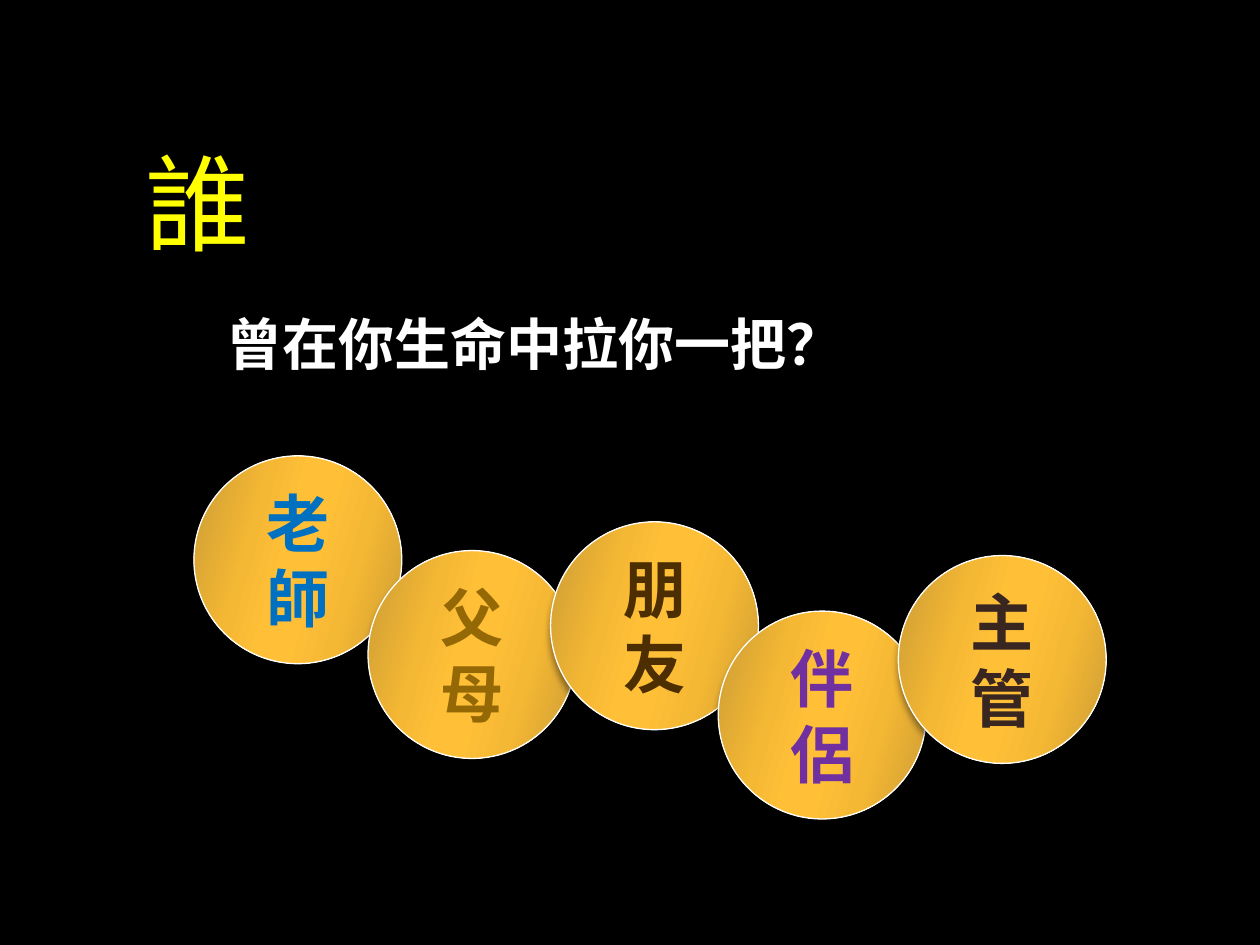
from lxml.etree import SubElement
from pptx import Presentation
from pptx.dml.color import RGBColor
from pptx.enum.shapes import MSO_SHAPE as Shape
from pptx.enum.text import MSO_ANCHOR as Anchor, PP_ALIGN as Align
from pptx.oxml import parse_xml
from pptx.oxml.ns import nsdecls, qn
from pptx.util import Cm, Pt

COLOURS = {
    "background": "000000",
    "question": "FFFF00",
    "white": "FFFFFF",
    "teacher": "0070C0",
    "parents": "956806",
    "friends": "4C2E00",
    "partner": "7030A0",
    "manager": "3A2620",
    "gold_edge": "CA9B34",
    "gold": "F5B834",
    "gold_shine": "FFC038",
}
GOLD_STOPS = [(0, "gold_edge"), (30, "gold"), (45, "gold_shine"),
              (55, "gold_shine"), (73, "gold"), (100, "gold_edge")]
DIAMETER = 4.19


class SlideBuilder:
    """Holds the style and the current slide."""

    font = "Cabin"

    def __init__(self, slide):
        self.slide = slide

    def colour(self, name):
        return RGBColor.from_string(COLOURS[name])

    def background(self, name):
        fill = self.slide.background.fill
        fill.solid()
        fill.fore_color.rgb = self.colour(name)

    def run(self, paragraph, words, size, colour, bold=False):
        run = paragraph.add_run()
        run.text = words
        run.font.name = self.font
        run.font.size = Pt(size)
        run.font.bold = bold
        run.font.color.rgb = self.colour(colour)
        return run

    def text(self, words, left, top, width, height, size, colour,
             bold=False, wrap=True):
        box = self.slide.shapes.add_textbox(Cm(left), Cm(top), Cm(width), Cm(height))
        box.text_frame.word_wrap = wrap
        paragraph = box.text_frame.paragraphs[0]
        self.run(paragraph, words, size, colour, bold)
        return paragraph

    def gold_circle(self, words, left, top, colour):
        circle = self.slide.shapes.add_shape(
            Shape.OVAL, Cm(left), Cm(top), Cm(DIAMETER), Cm(DIAMETER))
        circle.line.color.rgb = self.colour("white")
        circle.line.width = Pt(0.75)
        self.gold_fill(circle)
        self.soft_shadow(circle)
        frame = circle.text_frame
        frame.word_wrap = True
        frame.vertical_anchor = Anchor.MIDDLE
        paragraph = frame.paragraphs[0]
        paragraph.alignment = Align.CENTER
        self.run(paragraph, words, 36, colour, bold=True)

    def gold_fill(self, shape):
        stops = "".join(
            f'<a:gs pos="{percent * 1000}"><a:srgbClr val="{COLOURS[name]}"/></a:gs>'
            for percent, name in GOLD_STOPS)
        gradient = parse_xml(
            f'<a:gradFill {nsdecls("a")} rotWithShape="1"><a:gsLst>{stops}</a:gsLst>'
            f'<a:lin ang="{16 * 60000}" scaled="0"/></a:gradFill>')
        shape.element.spPr.find(qn("a:prstGeom")).addnext(gradient)

    def soft_shadow(self, shape):
        shape.shadow.inherit = False
        effects = shape.element.spPr.find(qn("a:effectLst"))
        shadow = SubElement(effects, qn("a:outerShdw"), blurRad=str(Pt(4)),
                            dist=str(Pt(3.4)), dir=str(90 * 60000), rotWithShape="0")
        black = SubElement(shadow, qn("a:srgbClr"), val=COLOURS["background"])
        SubElement(black, qn("a:alpha"), val="40000")


def main():
    deck = Presentation()
    deck.slide_width, deck.slide_height = Cm(25.4), Cm(19.05)
    builder = SlideBuilder(deck.slides.add_slide(deck.slide_layouts[6]))
    builder.background("background")

    # Question
    who = builder.text("誰", 2.69, 2.67, 19.79, 9.25, 60, "question")
    who.space_before = Pt(12)
    who.runs[0].font._element.set("spc", "30")
    builder.text("曾在你生命中拉你一把？", 4.32, 6.12, 13.06, 1.63, 32, "white",
                 bold=True, wrap=False)

    # People who may have helped, overlapping from left to right
    helpers = [
        ("老師", 3.91, 9.19, "teacher"),
        ("父母", 7.42, 11.1, "parents"),
        ("朋友", 11.1, 10.52, "friends"),
        ("伴侶", 14.48, 12.32, "partner"),
        ("主管", 18.11, 11.2, "manager"),
    ]
    for helper in helpers:
        builder.gold_circle(*helper)

    deck.save("out.pptx")


if __name__ == "__main__":
    main()
